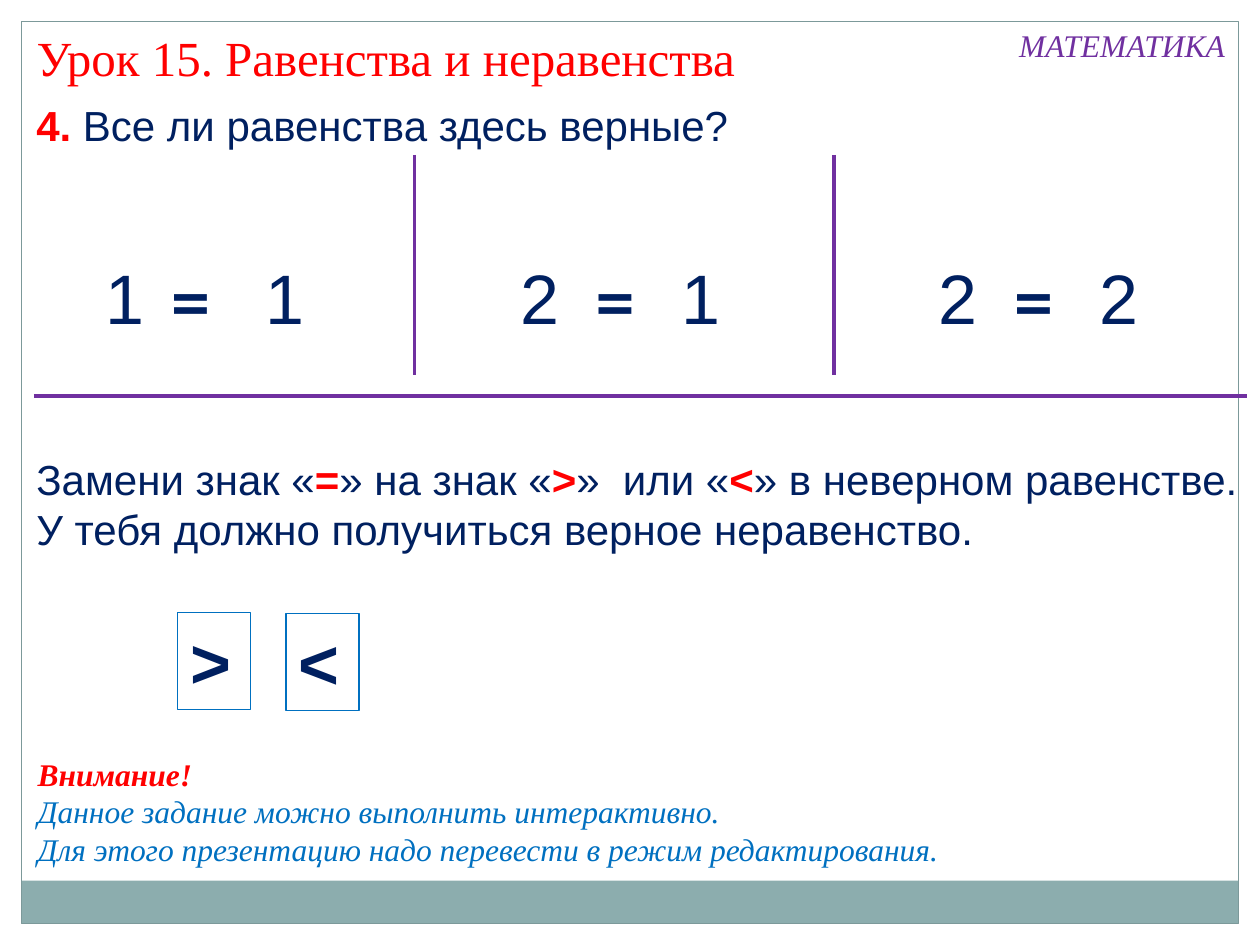
from dataclasses import dataclass

from lxml.etree import SubElement
from pptx import Presentation
from pptx.dml.color import RGBColor
from pptx.enum.shapes import MSO_CONNECTOR as CONN, MSO_SHAPE as SHAPE
from pptx.enum.text import MSO_ANCHOR as ANCHOR, MSO_AUTO_SIZE as AUTO, PP_ALIGN as ALIGN
from pptx.oxml.ns import qn
from pptx.util import Pt

PX = 9144


@dataclass(frozen=True)
class Theme:
    white: str = "FFFFFF"
    band: str = "8CADAE"
    frame: str = "7C999A"
    red: str = "FF0000"
    navy: str = "002060"
    blue: str = "0070C0"
    purple: str = "7030A0"
    serif: str = "Times New Roman"
    sans: str = "Arial"
    sign: str = "Cambria"
    title: int = 28
    body: int = 24
    note: int = 18
    digit: int = 40
    thin: float = 0.75
    thick: float = 2.25


T = Theme()


def px(*values):
    return [round(v * PX) for v in values]


def rgb(color):
    return RGBColor.from_string(color)


def write(sp, paragraphs, font=T.sans, size=T.body, color=T.navy, bold=False,
          italic=False, wrap=True):
    tf = sp.text_frame
    tf.auto_size = AUTO.NONE
    tf.word_wrap = wrap
    tf.vertical_anchor = ANCHOR.TOP
    for i, runs in enumerate(paragraphs):
        p = tf.paragraphs[0] if i == 0 else tf.add_paragraph()
        p.alignment = ALIGN.LEFT
        for text, run_color, run_bold in runs:
            r = p.add_run()
            r.text = text
            f = r.font
            f.name, f.size = font, Pt(size)
            f.color.rgb = rgb(run_color or color)
            f.bold, f.italic = bold or run_bold, italic


def plain(text):
    return text, None, False


def strong(text):
    return text, T.red, True


def add_text(s, box, paragraphs, **fmt):
    sp = s.shapes.add_textbox(*px(*box))
    write(sp, paragraphs, **fmt)


def add_rect(s, box, fill=None, line=None):
    sp = s.shapes.add_shape(SHAPE.RECTANGLE, *px(*box))
    sp.shadow.inherit = False
    if fill:
        sp.fill.solid()
        sp.fill.fore_color.rgb = rgb(fill)
    else:
        sp.fill.background()
    if line:
        sp.line.color.rgb = rgb(line)
        sp.line.width = Pt(T.thin)
    else:
        sp.line.fill.background()
    return sp


def add_rule(s, x1, y1, x2, y2):
    c = s.shapes.add_connector(CONN.STRAIGHT, *px(x1, y1, x2, y2))
    c.line.color.rgb = rgb(T.purple)
    c.line.width = Pt(T.thick)
    SubElement(c._element.spPr, qn("a:effectLst"))


def add_frame(s, box):
    x, y, w, h = box
    add_rect(s, (x, y + h - 34, w, 34), fill=T.band)
    add_rect(s, box, line=T.frame)


def add_header(s, box):
    x, y, w, h = box
    title = s.shapes.title
    title.left, title.top, title.width, title.height = px(x, y, 780, h)
    write(title, [[plain("Урок 15. Равенства и неравенства")]],
          font=T.serif, size=T.title, color=T.red)
    add_text(s, (x + w - 185, y - 1, 185, 40), [[plain("МАТЕМАТИКА")]],
             font=T.serif, size=T.note, color=T.purple, italic=True, wrap=False)


def add_equation(s, box, left, right, sign_at, right_at):
    x, y, w, h = box
    add_text(s, (x, y, w, h), [[plain(left)]], size=T.digit)
    add_text(s, (x + sign_at, y, 46, h), [[plain("=")]],
             font=T.sign, size=T.digit, bold=True)
    add_text(s, (x + right_at, y, w, h), [[plain(right)]], size=T.digit)


def add_equalities(s, box):
    x, y, w, h = box
    for divider in (302, 635):
        add_rule(s, x + divider, y, x + divider, y + 175)
    add_rule(s, x, y + h, x + w, y + h)
    columns = [
        (47, 52, "1", "1", 51, 127),
        (376, 58, "2", "1", 59, 128),
        (708, 58, "2", "2", 59, 128),
    ]
    for left, width, *equation in columns:
        add_equation(s, (x + left, y + 74, width, 77), *equation)


def add_sign_cards(s, box):
    x, y, w, h = box
    for i, sign in enumerate("><"):
        sp = add_rect(s, (x + 86 * i, y + i, w, h), fill=T.white, line=T.blue)
        write(sp, [[plain(sign)]], size=T.digit, bold=True)


def add_task(s, box):
    add_text(s, box, [[
        plain("Замени знак «"), strong("="), plain("» на знак «"), strong(">"),
        plain("»  или «"), strong("<"),
        plain("» в неверном равенстве. У тебя должно получиться верное неравенство."),
    ]])


def add_notice(s, box):
    add_text(s, box, [
        [strong("Внимание!")],
        [plain("Данное задание можно выполнить интерактивно.")],
        [plain("Для этого презентацию надо перевести в режим редактирования.")],
    ], font=T.serif, size=T.note, color=T.blue, italic=True)


def main():
    prs = Presentation()
    prs.slide_width, prs.slide_height = px(1000, 750)
    s = prs.slides.add_slide(prs.slide_layouts[5])
    add_frame(s, (17, 17, 966, 716))
    add_header(s, (19, 17, 965, 57))
    add_text(s, (19, 74, 607, 50),
             [[strong("4. "), plain("Все ли равенства здесь верные?")]])
    add_equalities(s, (27, 123, 963, 191))
    add_task(s, (19, 355, 981, 91))
    add_sign_cards(s, (141, 486, 58, 77))
    add_notice(s, (20, 594, 807, 101))
    prs.save("out.pptx")


if __name__ == "__main__":
    main()
